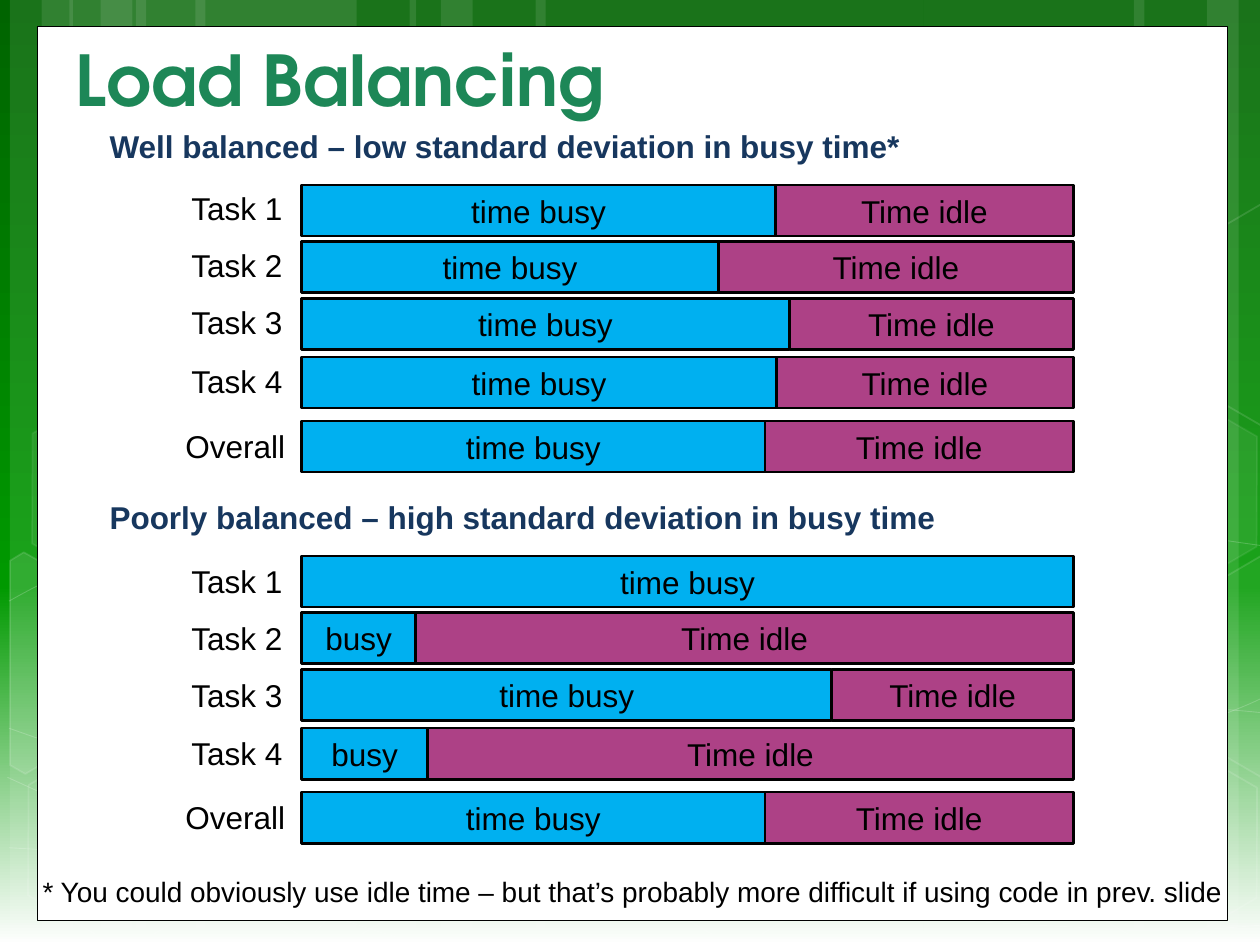
from copy import deepcopy
from dataclasses import dataclass
from math import cos, radians, sin
from typing import NamedTuple, Optional

from lxml.etree import SubElement
from pptx import Presentation
from pptx.dml.color import RGBColor as Rgb
from pptx.enum.shapes import MSO_SHAPE as Preset
from pptx.enum.text import MSO_ANCHOR as Anchor, MSO_AUTO_SIZE as AutoSize, PP_ALIGN as Align
from pptx.oxml.ns import qn
from pptx.util import Cm, Pt


@dataclass(frozen=True)
class Theme:
    font: str = "Arial"
    title_font: str = "TeX Gyre Adventor"
    title: Rgb = Rgb(0x1D, 0x87, 0x57)
    heading: Rgb = Rgb(0x17, 0x37, 0x5E)
    black: Rgb = Rgb(0, 0, 0)
    white: Rgb = Rgb(255, 255, 255)
    busy: Rgb = Rgb(0x00, 0xB0, 0xF0)
    idle: Rgb = Rgb(0xAD, 0x41, 0x86)
    gradient: tuple = ((0, Rgb(0, 0x64, 0)), (0.62, Rgb(0, 0x99, 0)), (1, Rgb(255, 255, 255)))
    title_size: int = 40
    text_size: int = 18
    note_size: int = 16


class Box(NamedTuple):
    left: float
    top: float
    width: float
    height: float


class Hexagon(NamedTuple):
    left: float
    top: float
    fill_alpha: Optional[int]
    line_alpha: int


class Polygon(NamedTuple):
    points: list
    center: tuple
    fill_alpha: Optional[int]


class Section(NamedTuple):
    heading: str
    heading_top: float
    heading_width: float
    bars_top: float
    label_shifts: tuple
    splits: tuple


THEME = Theme()
SLIDE_WIDTH, SLIDE_HEIGHT = 25.4, 19.05
TILT = 30
BAR_LEFT, BAR_RIGHT, BAR_HEIGHT = 6.08, 21.64, 1.03
ROWS = (("Task 1", 0), ("Task 2", 1.14), ("Task 3", 2.29), ("Task 4", 3.47), ("Overall", 4.76))
SECTIONS = (
    Section("Well balanced – low standard deviation in busy time*", 2.44, 16.61, 3.73,
            (-0.05, -0.03, -0.03, -0.03, 0), (15.63, 14.48, 15.91, 15.65, 15.42)),
    Section("Poorly balanced – high standard deviation in busy time", 9.92, 17.32, 11.21,
            (0, 0, 0, 0, 0), (BAR_RIGHT, 8.38, 16.77, 8.62, 15.42)),
)
STRIPES = (
    (2.74, 4.45), (0.2, 1.27), (0.84, 2.11), (3.94, 4.45), (1.4, 1.27), (2.03, 2.11),
    (18.62, 4.45), (24.33, 1.27), (22.86, 2.11), (10.8, 7.82), (8.26, 1.27), (8.89, 2.11),
)
HEXAGONS = (
    Hexagon(8.48, 0.91, 4, 8), Hexagon(12.62, 14.96, 6, 12), Hexagon(0.28, 15.01, None, 12),
    Hexagon(0.36, 7.92, 7, 8), Hexagon(4.42, 15.04, None, 12), Hexagon(21.18, 15.06, None, 12),
    Hexagon(21.18, 7.98, 7, 8),
)
LEFT_EDGE = [(0.2, 11.3), (0.48, 11.13), (2.44, 12.24), (2.41, 14.48), (0.51, 15.6), (0.2, 15.42)]
RIGHT_EDGE = [(23.52, 12.32), (25.43, 11.2), (25.63, 11.33), (25.63, 15.57), (25.45, 15.67), (23.52, 14.55)]
POLYGONS = (
    Polygon(LEFT_EDGE, (0.91, 13.59), 10),
    Polygon(RIGHT_EDGE, (25.02, 13.21), 4),
    Polygon([(x, y - 7.09) for x, y in RIGHT_EDGE], (25.02, 6.12), None),
)
CURVES = (
    [(0.18, 17.09), (1.55, 17.17), (2.92, 17.25), (4.83, 17.22), (6.73, 17.2), (9.09, 17.15), (11.63, 16.89),
     (14.17, 16.64), (17.78, 16.15), (20.12, 15.67), (22.43, 15.19), (24.82, 14.43), (25.58, 14)],
    [(0.18, 12.12), (0.91, 11.71), (1.65, 11.33), (3.07, 10.95), (4.52, 10.57), (6.58, 10.01), (8.81, 9.83),
     (11.07, 9.65), (13.82, 9.63), (16.61, 9.83), (19.41, 10.03), (24.05, 10.82), (25.58, 11.02)],
    [(0.15, 15.67), (3.23, 17.07), (6.27, 18.47), (8.48, 19.02)],
    [(0.18, 14.68), (0.97, 14.96), (1.78, 15.24), (3.25, 15.65), (4.72, 16.03), (6.93, 16.66), (9.07, 17.09),
     (11.18, 17.53), (13.84, 17.98), (15.95, 18.24), (18.06, 18.52), (20.32, 18.62), (21.67, 18.69),
     (22.99, 18.8), (23.34, 18.75), (24, 18.75), (24.66, 18.72), (25.12, 18.67), (25.58, 18.64)],
    [(6.15, 19.02), (6.6, 18.52), (7.06, 18.01), (7.67, 17.55), (8.28, 17.09), (9.14, 16.59), (9.86, 16.23),
     (10.57, 15.88), (11, 15.72), (11.94, 15.47), (12.85, 15.21), (14.55, 14.86), (15.44, 14.68),
     (16.36, 14.5), (16.48, 14.5), (17.27, 14.45), (18.06, 14.38), (19.3, 14.3), (20.17, 14.27),
     (21.06, 14.25), (22.5, 14.27), (22.5, 14.27), (23.07, 14.27), (23.64, 14.27), (24.21, 14.27),
     (24.66, 14.3), (25.1, 14.33), (25.55, 14.38)],
)


def style(shape, fill: Optional[Rgb], line: Optional[Rgb], width: float = 1, alphas: tuple = ()) -> None:
    """Set fill, line and, in that order, their opacity in percent."""
    shape.shadow.inherit = False
    for target, color in ((shape.fill, fill), (shape.line.fill, line)):
        if color is None:
            target.background()
        else:
            target.solid()
            target.fore_color.rgb = color
    if line is not None:
        shape.line.width = Pt(width)
    for color, alpha in zip(shape.element.iter(qn("a:srgbClr")), alphas):
        SubElement(color, qn("a:alpha"), val=str(alpha * 1000))


def style_glass(shape, fill_alpha: Optional[int], line_alpha: int, width: float = 1) -> None:
    """Make a shape translucent white."""
    alphas = (line_alpha,) if fill_alpha is None else (fill_alpha, line_alpha)
    style(shape, None if fill_alpha is None else THEME.white, THEME.white, width, alphas)


def add_box(slide, preset: Preset, box: Box):
    """Add a preset shape."""
    return slide.shapes.add_shape(preset, *map(Cm, box))


def add_outline(slide, points: list, close: bool):
    """Add a freeform through the points."""
    start, *rest = [(Cm(x), Cm(y)) for x, y in points]
    builder = slide.shapes.build_freeform(*start)
    builder.add_line_segments(rest, close=close)
    return builder.convert_to_shape()


def add_curve(slide, controls: list) -> None:
    """Add a chain of cubic curves."""
    shape = add_outline(slide, controls, False)
    outline = shape.element.find(".//" + qn("a:path"))
    lines = outline.findall(qn("a:lnTo"))
    for index in range(0, len(lines), 3):
        cubic = SubElement(outline, qn("a:cubicBezTo"))
        for line in lines[index:index + 3]:
            cubic.append(line[0])
            outline.remove(line)
    style_glass(shape, None, 20, 0.5)


def add_polygon(slide, polygon: Polygon) -> None:
    """Add a cut hexagon, drawn upright and then tilted about its center."""
    center_x, center_y = polygon.center
    cosine, sine = cos(radians(TILT)), sin(radians(TILT))
    upright = [(center_x + (x - center_x) * cosine + (y - center_y) * sine,
                center_y - (x - center_x) * sine + (y - center_y) * cosine) for x, y in polygon.points]
    shape = add_outline(slide, upright, True)
    shape.rotation = TILT
    style_glass(shape, polygon.fill_alpha, 12)


def write(shape, text: str, size: int = THEME.text_size, color: Rgb = THEME.black,
          bold: bool = False, font: str = THEME.font, align: Align = Align.LEFT) -> None:
    """Write one formatted run into a shape."""
    paragraph = shape.text_frame.paragraphs[0]
    paragraph.alignment = align
    run = paragraph.add_run()
    run.text = text
    run.font.name, run.font.size, run.font.bold = font, Pt(size), bold
    run.font.color.rgb = color


def add_text(slide, box: Box, text: str, **formats) -> None:
    """Add an unwrapped text box."""
    shape = slide.shapes.add_textbox(*map(Cm, box))
    shape.text_frame.word_wrap = False
    write(shape, text, **formats)


def add_bar(slide, left: float, right: float, top: float, text: str, color: Rgb) -> None:
    """Add one labelled part of a time bar."""
    shape = add_box(slide, Preset.RECTANGLE, Box(left, top, right - left, BAR_HEIGHT))
    style(shape, color, THEME.black, 1.5)
    write(shape, text, align=Align.CENTER)


def add_section(slide, section: Section) -> None:
    """Add a heading with its five time bars."""
    add_text(slide, Box(1.96, section.heading_top, section.heading_width, 1.02), section.heading,
             color=THEME.heading, bold=True)
    for (label, offset), split, shift in zip(ROWS, section.splits, section.label_shifts):
        top = section.bars_top + offset
        left, width = (3.49, 2.54) if label == "Overall" else (3.61, 2.36)
        add_text(slide, Box(left, top + shift, width, 1.02), label)
        if split < BAR_RIGHT:
            add_bar(slide, split, BAR_RIGHT, top, "Time idle", THEME.idle)
        add_bar(slide, BAR_LEFT, split, top, "time busy" if split - BAR_LEFT > 3 else "busy", THEME.busy)


def add_backdrop(slide, master) -> None:
    """Give the master its green gradient, pattern and white panel."""
    fill = master.background.fill
    fill.gradient()
    fill.gradient_angle = 270
    stops = master.element.find(".//" + qn("a:gsLst"))
    stops.append(deepcopy(stops[-1]))
    for stop, (position, color) in zip(fill.gradient_stops, THEME.gradient):
        stop.position, stop.color.rgb = position, color
    for left, width in STRIPES:
        style(add_box(slide, Preset.RECTANGLE, Box(left, 0, width, SLIDE_HEIGHT)), THEME.white, None, alphas=(10,))
    for curve in CURVES:
        add_curve(slide, curve)
    for hexagon in HEXAGONS:
        shape = add_box(slide, Preset.HEXAGON, Box(hexagon.left, hexagon.top, 4.45, 3.86))
        shape.adjustments[0], shape.rotation = 0.285, TILT
        style_glass(shape, hexagon.fill_alpha, hexagon.line_alpha)
    for polygon in POLYGONS:
        add_polygon(slide, polygon)
    style(add_box(slide, Preset.RECTANGLE, Box(0.76, 0.53, 23.98, 18.02)), THEME.white, THEME.black, 0.5)
    drawn = [shape for shape in slide.shapes if not shape.is_placeholder]
    for index, shape in enumerate(drawn):
        shape.element.find(".//" + qn("p:cNvPr")).set("id", str(100 + index))
        master.shapes.element.insert(2 + index, shape.element)


def add_title(slide, text: str) -> None:
    """Fill the title placeholder."""
    title = slide.shapes.title
    title.left, title.top, title.width, title.height = map(Cm, Box(1.27, -0.09, 23.29, 2.64))
    title.text_frame.vertical_anchor = Anchor.BOTTOM
    title.text_frame.auto_size = AutoSize.NONE
    write(title, text, THEME.title_size, THEME.title, True, THEME.title_font)


def main() -> None:
    """Build and save the slide."""
    presentation = Presentation()
    presentation.slide_width, presentation.slide_height = Cm(SLIDE_WIDTH), Cm(SLIDE_HEIGHT)
    slide = presentation.slides.add_slide(presentation.slide_layouts[5])
    add_backdrop(slide, presentation.slide_master)
    add_title(slide, "Load Balancing")
    for section in SECTIONS:
        add_section(slide, section)
    add_text(slide, Box(0.61, 17.5, 24.59, 0.94),
             "* You could obviously use idle time – but that’s probably more difficult if using code in prev. slide",
             size=THEME.note_size)
    presentation.save("out.pptx")


if __name__ == "__main__":
    main()
